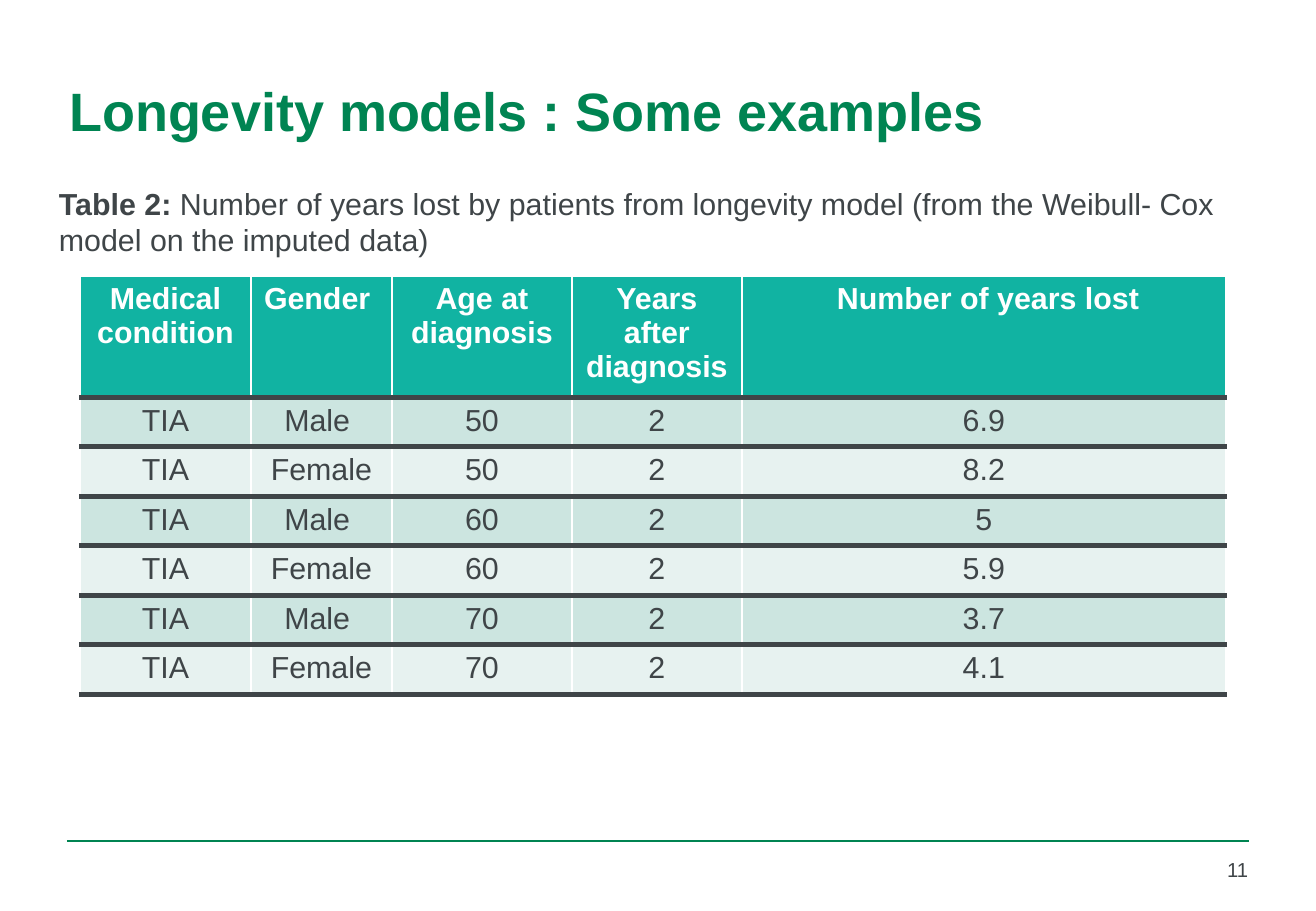
from lxml.etree import SubElement
from pptx import Presentation
from pptx.dml.color import RGBColor
from pptx.enum.shapes import MSO_CONNECTOR as Connector
from pptx.enum.text import MSO_ANCHOR as Anchor, MSO_AUTO_SIZE as AutoSize, PP_ALIGN as Align
from pptx.oxml.ns import qn
from pptx.util import Pt

SCALE = 7526
GREEN, TEAL, INK, WHITE = "008452", "11B3A2", "3F4548", "FFFFFF"
BANDS = ["CCE5E0", "E7F2F0"]
BODY = {"name": "Arial", "size": Pt(18), "bold": False}
BOLD = {**BODY, "bold": True}
TITLE = {**BOLD, "size": Pt(32)}
NUMBER = {**BODY, "size": Pt(12)}

HEADERS = ["Medical condition", "Gender ", "Age at diagnosis",
           "Years after diagnosis", " Number of years lost"]
PATIENTS = [
    ["TIA", "Male ", "50", "2", "6.9"],
    ["TIA", "Female", "50", "2", "8.2"],
    ["TIA", "Male ", "60", "2", "5"],
    ["TIA", "Female", "60", "2", "5.9"],
    ["TIA", "Male ", "70", "2", "3.7"],
    ["TIA", "Female", "70", "2", "4.1"],
]
COLUMNS = [171, 141, 180, 170, 484]
ROWS = [113] + [49, 50] * 3


def px(*lengths):
    return [length * SCALE for length in lengths]


def color(value):
    return RGBColor.from_string(value)


def write(frame, spans, align=Align.LEFT):
    para = frame.paragraphs[0]
    para.alignment = align
    for text, style, ink in spans:
        span = para.add_run()
        span.text = text
        for name, value in style.items():
            setattr(span.font, name, value)
        span.font.color.rgb = color(ink)


def add_title(page, box):
    title = page.shapes.title
    for name, value in zip(["left", "top", "width", "height"], px(*box)):
        setattr(title, name, value)
    frame = title.text_frame
    frame.auto_size = AutoSize.NONE
    frame.vertical_anchor = Anchor.MIDDLE
    write(frame, [("Longevity models : Some examples", TITLE, GREEN)])


def add_text(page, box, spans, align=Align.LEFT):
    frame = page.shapes.add_textbox(*px(*box)).text_frame
    frame.word_wrap = True
    write(frame, spans, align)


def add_border(cell, side, ink, points):
    line = SubElement(cell._tc.get_or_add_tcPr(), qn(f"a:ln{side}"), w=str(Pt(points)))
    fill = SubElement(line, qn("a:solidFill"))
    SubElement(fill, qn("a:srgbClr"), val=ink)


def add_table(page, box):
    table = page.shapes.add_table(len(ROWS), len(COLUMNS), *px(*box)).table
    table.horz_banding = False
    for column, width in zip(table.columns, px(*COLUMNS)):
        column.width = width
    for row, height in zip(table.rows, px(*ROWS)):
        row.height = height
    for index, values in enumerate([HEADERS] + PATIENTS):
        header = index == 0
        fill = TEAL if header else BANDS[(index - 1) % 2]
        style, ink = (BOLD, WHITE) if header else (BODY, INK)
        top = (WHITE, 1) if header else (INK, 3)
        borders = {"L": (WHITE, 1), "R": (WHITE, 1), "T": top, "B": (INK, 3)}
        for cell, value in zip(table.rows[index].cells, values):
            for side, border in borders.items():
                add_border(cell, side, *border)
            cell.fill.solid()
            cell.fill.fore_color.rgb = color(fill)
            write(cell.text_frame, [(value, style, ink)], Align.CENTER)


def add_footer(page, box):
    left, top, width, height = box
    rule = page.shapes.add_connector(
        Connector.STRAIGHT, *px(left, top, left + width, top))
    rule.line.color.rgb = color(GREEN)
    rule.line.width = Pt(1)
    SubElement(rule._element.spPr, qn("a:effectLst"))
    add_text(page, (left + width - 83, top + 10, 94, height - 10),
             [("11", NUMBER, INK)], Align.RIGHT)


def main():
    deck = Presentation()
    deck.slide_width, deck.slide_height = px(1316, 911)
    page = deck.slides.add_slide(deck.slide_layouts.get_by_name("Title Only"))
    add_footer(page, (67, 841, 1182, 55))
    add_title(page, (57, 53, 1193, 114))
    add_table(page, (80, 276, sum(COLUMNS), sum(ROWS)))
    add_text(page, (47, 179, 1242, 86), [
        ("Table 2: ", BOLD, INK),
        ("Number of years lost by patients from longevity model "
         "(from the Weibull- Cox model on the imputed data)", BODY, INK),
    ])
    deck.save("out.pptx")


if __name__ == "__main__":
    main()
